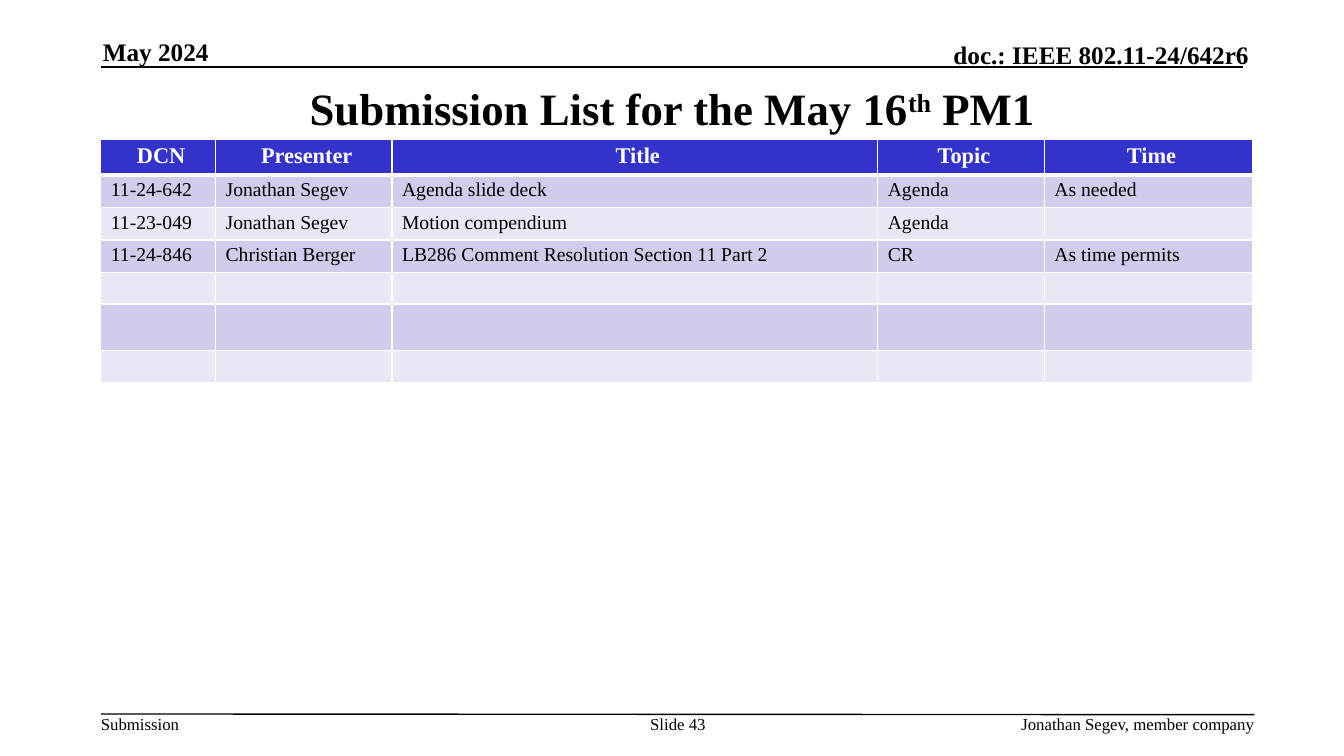
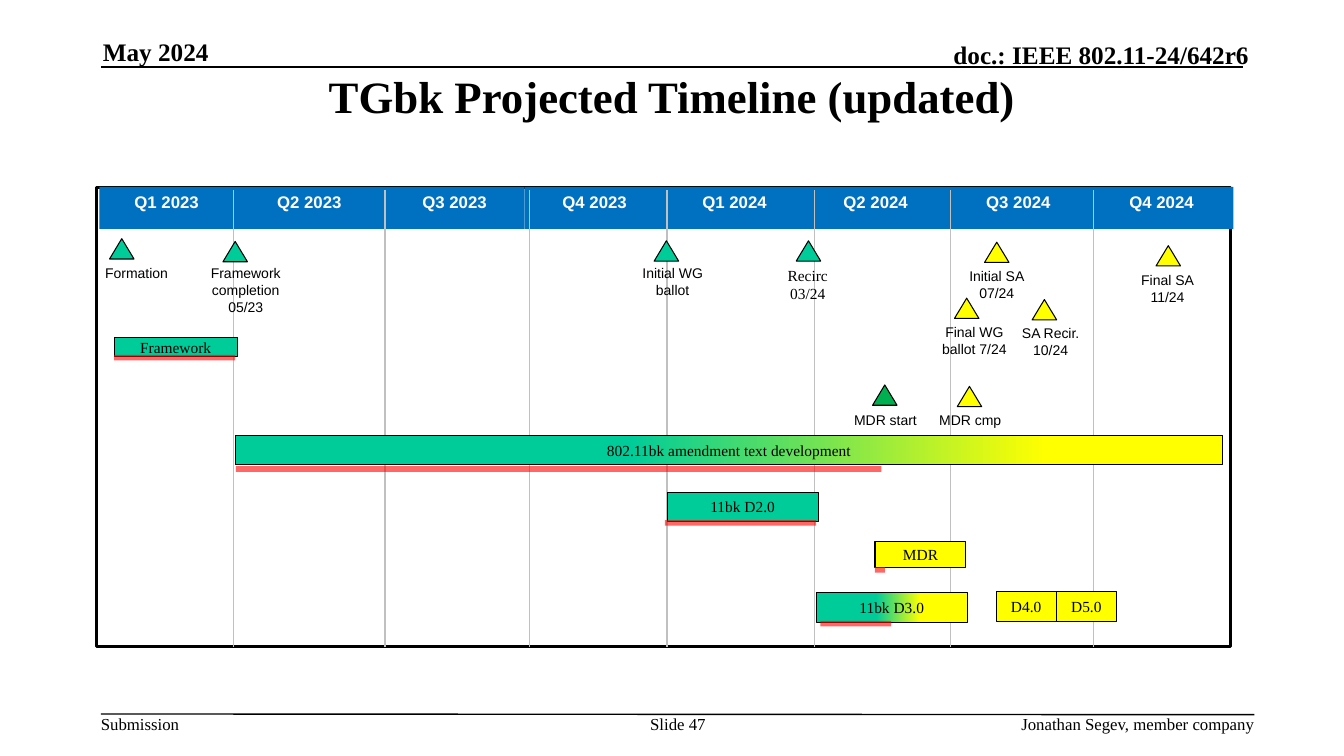
import itertools

import lxml.etree
import pptx
import pptx.dml.color
import pptx.enum.shapes
import pptx.enum.text
import pptx.oxml.ns
import pptx.util

Pt = pptx.util.Pt
qn = pptx.oxml.ns.qn
ALIGN = pptx.enum.text.PP_ALIGN
ANCHOR = pptx.enum.text.MSO_ANCHOR
SHAPE = pptx.enum.shapes.MSO_SHAPE

COLORS = {
    "black": "000000",
    "white": "FFFFFF",
    "header": "3333CC",
    "band_dark": "CECEEC",
    "band_light": "E8E8F6",
    "quarter": "0070C0",
    "grid": "C0C0C0",
    "done": "00CC99",
    "started": "00B050",
    "planned": "FFFF00",
    "progress": "FF0000",
}
SERIF = "Times New Roman"
SANS = "Arial"

SUBMISSIONS = [
    ["DCN", "Presenter", "Title", "Topic", "Time"],
    ["11-24-642", "Jonathan Segev", "Agenda slide deck", "Agenda", "As needed"],
    ["11-23-049", "Jonathan Segev", "Motion compendium", "Agenda", ""],
    ["11-24-846", "Christian Berger", "LB286 Comment Resolution Section 11 Part 2", "CR",
     "As time permits"],
    [""] * 5,
    [""] * 5,
    [""] * 5,
]
COLUMN_WIDTHS = [82, 126, 347, 119, 149]
ROW_HEIGHTS = [25, 22.5, 22.5, 22.5, 22.5, 33.5, 22.5]

QUARTERS = [f"Q{quarter} {year}" for year in (2023, 2024) for quarter in range(1, 5)]
QUARTER_EDGES = [2, 98, 206, 305.5, 406, 505.5, 607.5, 709.5, 812]
GRID_LINES = [98, 206, 309, 407.5, 513, 610, 712]

# label lines, fill, marker centre and top, label centre, top and width, font, size
MILESTONES = [
    (["Formation"], "done", (18, 36.5), (28.5, 52, 67), SANS, 10),
    (["Framework completion", "05/23"], "done", (99, 38.5), (106.5, 52, 98.5), SANS, 10),
    (["Initial WG ballot"], "done", (407, 38), (411.5, 52, 67), SANS, 10),
    (["Recirc 03/24"], "done", (508.5, 38), (508, 53, 67), SERIF, 11),
    (["Initial SA", "07/24"], "planned", (643, 39), (643, 54, 67), SANS, 10),
    (["Final WG ballot 7/24"], "planned", (621.5, 79), (627, 94, 67), SANS, 10),
    (["MDR start"], "started", (563, 141), (563.5, 157, 67), SANS, 10),
    (["MDR cmp"], "planned", (623.5, 142), (624, 157, 67), SANS, 10),
    (["Final SA", "11/24"], "planned", (765.5, 41.5), (765, 57, 67), SANS, 10),
    (["SA Recir.", "10/24"], "planned", (677, 80), (681.5, 95, 67), SANS, 10),
]
BARS = [
    ("Framework", "done", (12.5, 107, 88, 14), (12.5, 99, 121.5)),
    ("802.11bk amendment text development", (0.4, 0.82), (99, 177, 705.5, 21),
     (99.5, 560.5, 201)),
    ("11bk D2.0", "done", (407.5, 217.5, 108, 21), (406, 514, 239.5)),
    ("MDR", "planned", (556, 252.5, 65, 19), (556, 563, 273)),
    ("11bk D3.0", (0.4, 0.69), (514, 289.5, 108, 21), (517, 567.5, 311.5)),
    ("D4.0", "planned", (642.5, 288.5, 43, 21.5), None),
    ("D5.0", "planned", (685.5, 288.5, 43, 21.5), None),
]


def rgb(name):
    return pptx.dml.color.RGBColor.from_string(COLORS[name])


def style_span(span, size, font, color, bold):
    span.font.size = Pt(size)
    span.font.name = font
    span.font.bold = bold
    span.font.color.rgb = rgb(color)


def write(frame, lines, size, font=SERIF, color="black", bold=False,
          align=ALIGN.CENTER, anchor=ANCHOR.TOP, inset=(0, 0), wrap=True):
    frame.word_wrap = wrap
    frame.vertical_anchor = anchor
    frame.margin_left = frame.margin_right = Pt(inset[0])
    frame.margin_top = frame.margin_bottom = Pt(inset[1])
    frame.text = "\n".join(lines)
    for para in frame.paragraphs:
        para.alignment = align
        for span in para.runs:
            style_span(span, size, font, color, bold)


def add_text(page, box, lines, size, **style):
    label = page.shapes.add_textbox(*map(Pt, box))
    write(label.text_frame, lines, size, **style)
    return label


def add_block(page, kind, box, fill=None, line=None, width=0.75):
    block = page.shapes.add_shape(kind, *map(Pt, box))
    block.shadow.inherit = False
    if fill:
        block.fill.solid()
        block.fill.fore_color.rgb = rgb(fill)
    else:
        block.fill.background()
    if line:
        block.line.color.rgb = rgb(line)
        block.line.width = Pt(width)
    else:
        block.line.fill.background()
    return block


def add_line(page, ends, color, width=1, opacity=None):
    line = page.shapes.add_connector(pptx.enum.shapes.MSO_CONNECTOR.STRAIGHT, *map(Pt, ends))
    line.line.color.rgb = rgb(color)
    line.line.width = Pt(width)
    properties = line._element.spPr
    if opacity:
        tint = next(properties.iter(qn("a:srgbClr")))
        lxml.etree.SubElement(tint, qn("a:alpha")).set("val", str(opacity * 1000))
    lxml.etree.SubElement(properties, qn("a:effectLst"))


def add_page(deck, number, title_parts, title_height):
    page = deck.slides.add_slide(deck.slide_layouts[6])
    add_line(page, (72, 48, 888, 48), "black")
    add_line(page, (72, 510, 896, 510.5), "black")
    add_text(page, (73.5, 26, 196.5, 21.5), ["May 2024"], 18, bold=True,
             align=ALIGN.LEFT, anchor=ANCHOR.BOTTOM)
    add_text(page, (525, 28, 367, 21.5), ["doc.: IEEE 802.11-24/642r6"], 18, bold=True,
             align=ALIGN.RIGHT, anchor=ANCHOR.BOTTOM)
    add_text(page, (72, 510, 57, 14.5), ["Submission"], 12, align=ALIGN.LEFT, wrap=False)
    add_text(page, (456.5, 510, 55.5, 29), [f"Slide {number}"], 12)
    add_text(page, (562, 510, 334, 14.5), ["Jonathan Segev, member company"], 12,
             align=ALIGN.RIGHT)
    title = add_text(page, (72, 54, 816, title_height), title_parts[:1], 32, bold=True,
                     anchor=ANCHOR.MIDDLE, inset=(7.2, 3.6))
    for part, baseline in zip(title_parts[1:], ("30000", "0")):
        span = title.text_frame.paragraphs[0].add_run()
        span.text = part
        style_span(span, 32, SERIF, "black", True)
        span._r.get_or_add_rPr().set("baseline", baseline)
    return page


def set_borders(cell, bottom):
    properties = cell._tc.get_or_add_tcPr()
    for place, (side, width) in enumerate(zip("LRTB", (1, 1, 1, bottom))):
        border = lxml.etree.Element(qn(f"a:ln{side}"), w=str(Pt(width)))
        solid = lxml.etree.SubElement(border, qn("a:solidFill"))
        lxml.etree.SubElement(solid, qn("a:srgbClr")).set("val", COLORS["white"])
        properties.insert(place, border)


def fill_cell(cell, text, row):
    header = row == 0
    cell.fill.solid()
    cell.fill.fore_color.rgb = rgb(
        "header" if header else "band_dark" if row % 2 else "band_light")
    set_borders(cell, 3 if header else 1)
    cell.margin_left = Pt(7.2)
    cell.margin_right = Pt(3 if header else 7.2)
    cell.margin_top = cell.margin_bottom = Pt(3.2 if text else 0)
    cell.text_frame.text = text
    para = cell.text_frame.paragraphs[0]
    para.alignment = ALIGN.CENTER if header else ALIGN.LEFT
    for span in para.runs:
        style_span(span, 16 if header else 14, SERIF, "white" if header else "black", header)


def add_submissions(page, left, top):
    box = (left, top, sum(COLUMN_WIDTHS), sum(ROW_HEIGHTS))
    table = page.shapes.add_table(len(ROW_HEIGHTS), len(COLUMN_WIDTHS), *map(Pt, box)).table
    for column, width in zip(table.columns, COLUMN_WIDTHS):
        column.width = Pt(width)
    for row, (height, texts) in enumerate(zip(ROW_HEIGHTS, SUBMISSIONS)):
        table.rows[row].height = Pt(height)
        for column, text in enumerate(texts):
            fill_cell(table.cell(row, column), text, row)


def add_milestone(page, left, top, lines, fill, marker, label, font, size):
    center, marker_top = marker
    add_block(page, SHAPE.ISOSCELES_TRIANGLE,
              (left + center - 8.75, top + marker_top, 17.5, 14.5), fill, "black")
    center, label_top, width = label
    add_text(page, (left + center - width / 2, top + label_top, width, 31), lines, size,
             font=font, inset=(6.5, 2.9))


def add_bar(page, left, top, text, fill, box, progress):
    x, y, width, height = box
    blend = isinstance(fill, tuple)
    bar = add_block(page, SHAPE.RECTANGLE, (left + x, top + y, width, height),
                    None if blend else fill, "black")
    if blend:
        bar.fill.gradient()
        bar.fill.gradient_angle = 0
        for stop, position, color in zip(bar.fill.gradient_stops, fill, ("done", "planned")):
            stop.position = position
            stop.color.rgb = rgb(color)
    write(bar.text_frame, [text], 11, anchor=ANCHOR.MIDDLE)
    if progress:
        start, end, level = progress
        add_line(page, (left + start, top + level, left + end, top + level),
                 "progress", 4, opacity=60)


def add_timeline(page, left, top, width, height):
    add_block(page, SHAPE.RECTANGLE, (left, top, width, height), line="black", width=2)
    for quarter, (start, end) in zip(QUARTERS, itertools.pairwise(QUARTER_EDGES)):
        heading = add_block(page, SHAPE.RECTANGLE,
                            (left + start, top - 0.5, end - start, 30), "quarter")
        write(heading.text_frame, [quarter], 12, SANS, "white", True, inset=(7.2, 3.6))
    for x in GRID_LINES:
        add_line(page, (left + x, top + 2, left + x, top + height), "grid")
    for milestone in MILESTONES:
        add_milestone(page, left, top, *milestone)
    for bar in BARS:
        add_bar(page, left, top, *bar)


def main():
    deck = pptx.Presentation()
    deck.slide_width, deck.slide_height = Pt(960), Pt(540)
    page = add_page(deck, 43, ["Submission List for the May 16", "th", " PM1"], 46)
    add_submissions(page, 72, 99.5)
    page = add_page(deck, 47, ["TGbk Projected Timeline (updated)"], 29)
    add_timeline(page, 69, 134, 810, 328)
    deck.save("out.pptx")


if __name__ == "__main__":
    main()
